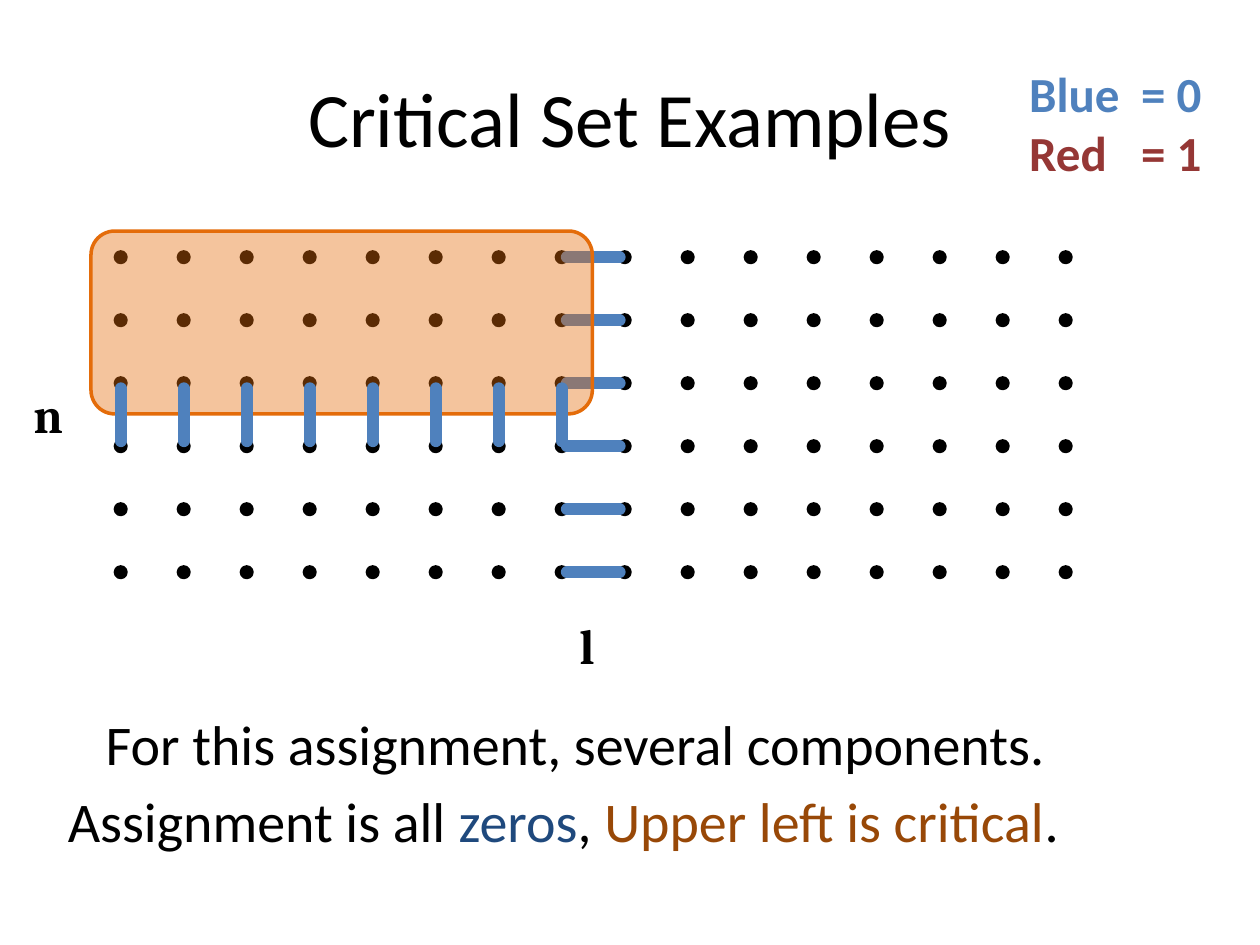
from lxml import etree
from pptx import Presentation
from pptx.dml.color import RGBColor
from pptx.enum.shapes import MSO_CONNECTOR, MSO_SHAPE
from pptx.enum.text import MSO_ANCHOR, MSO_AUTO_SIZE, PP_ALIGN
from pptx.oxml.ns import qn
from pptx.util import Pt

OVAL = MSO_SHAPE.OVAL
ROUND = MSO_SHAPE.ROUNDED_RECTANGLE
LINE = MSO_CONNECTOR.STRAIGHT
LEFT, CENTER = PP_ALIGN.LEFT, PP_ALIGN.CENTER
TOP, MIDDLE = MSO_ANCHOR.TOP, MSO_ANCHOR.MIDDLE
NO_FIT, GROW = MSO_AUTO_SIZE.NONE, MSO_AUTO_SIZE.SHAPE_TO_FIT_TEXT

BLACK = RGBColor(0x00, 0x00, 0x00)
BLUE = RGBColor(0x4F, 0x81, 0xBD)
NAVY = RGBColor(0x1F, 0x49, 0x7D)
RED = RGBColor(0x95, 0x37, 0x35)
ORANGE = RGBColor(0xE4, 0x6C, 0x0A)
BROWN = RGBColor(0x98, 0x48, 0x07)

COLS, ROWS = 16, 6
CUT_COL, CUT_ROW = 7, 2
STEP, DOT = 36, 6
GRID_X, GRID_Y = 69, 147


class Board:
    sans, serif = "Calibri", "Cambria"
    edge, thick = 2, 7

    def __init__(self, slide):
        self.slide = slide

    def text(self, runs, box, size=32, font=sans, bold=False, wrap=False,
             align=LEFT, anchor=TOP, fit=GROW, tab=None):
        frame = self.slide.shapes.add_textbox(*map(Pt, box)).text_frame
        frame.word_wrap = wrap
        frame.auto_size = fit
        frame.vertical_anchor = anchor
        para = frame.paragraphs[0]
        para.alignment = align
        if tab:
            stops = etree.SubElement(para._p.get_or_add_pPr(), qn("a:tabLst"))
            etree.SubElement(stops, qn("a:tab"), pos=str(Pt(tab)), algn="l")
        for words, color in runs:
            if words == "\n":
                para.add_line_break()
                continue
            run = para.add_run()
            run.text = words
            run.font.size = Pt(size)
            run.font.name = font
            run.font.bold = bold
            run.font.color.rgb = color

    def shape(self, kind, box, color, alpha=None):
        item = self.slide.shapes.add_shape(kind, *map(Pt, box))
        item.shadow.inherit = False
        item.fill.solid()
        item.fill.fore_color.rgb = color
        item.line.color.rgb = color
        item.line.width = Pt(self.edge)
        if alpha:
            tint = item._element.spPr.find(qn("a:solidFill"))[0]
            etree.SubElement(tint, qn("a:alpha"), val=str(alpha * 1000))
        return item

    def dot(self, x, y):
        self.shape(OVAL, (x - DOT / 2, y - DOT / 2, DOT, DOT), BLACK)

    def link(self, *ends):
        item = self.slide.shapes.add_connector(LINE, *map(Pt, ends))
        item.line.color.rgb = BLUE
        item.line.width = Pt(self.thick)
        item.line._get_or_add_ln().set("cap", "rnd")
        etree.SubElement(item._element.spPr, qn("a:effectLst"))


def spot(col, row):
    return GRID_X + col * STEP, GRID_Y + row * STEP


def main():
    deck = Presentation()
    deck.slide_width, deck.slide_height = Pt(720), Pt(540)
    board = Board(deck.slides.add_slide(deck.slide_layouts[6]))

    board.text([("Critical Set Examples", BLACK)], (36, 21.6, 648, 90), size=44,
               wrap=True, align=CENTER, anchor=MIDDLE, fit=NO_FIT)

    for col in range(COLS):
        for row in range(ROWS):
            board.dot(*spot(col, row))

    board.text([("Blue\t= 0", BLUE), ("\n", BLUE), ("Red\t= 1", RED)],
               (581, 33, 114.5, 75), size=28, bold=True, tab=64)
    board.text([("l", BLACK)], (324, 348, 22.3, 41), size=28,
               font=board.serif, bold=True)
    board.text([("n", BLACK)], (12, 216, 30.2, 41), size=28,
               font=board.serif, bold=True)
    board.text([("For this assignment, several components.", BLACK)],
               (53.3, 402, 556.5, 46))
    board.text([("Assignment is all ", BLACK), ("zeros", NAVY), (", ", BLACK),
                ("Upper left is critical", BROWN), (".", BLACK)],
               (31.7, 445.7, 825, 46), wrap=True)

    for row in range(ROWS):
        x, y = spot(CUT_COL, row)
        board.link(x + DOT / 2, y, x + STEP - DOT / 2, y)

    area = board.shape(ROUND, (52, 132, 286.5, 104.5), ORANGE, alpha=40)
    area.adjustments[0] = 0.13

    for col in range(CUT_COL + 1):
        x, y = spot(col, CUT_ROW)
        board.link(x, y + DOT / 2, x, y + STEP - DOT / 2)

    deck.save("out.pptx")


if __name__ == "__main__":
    main()
